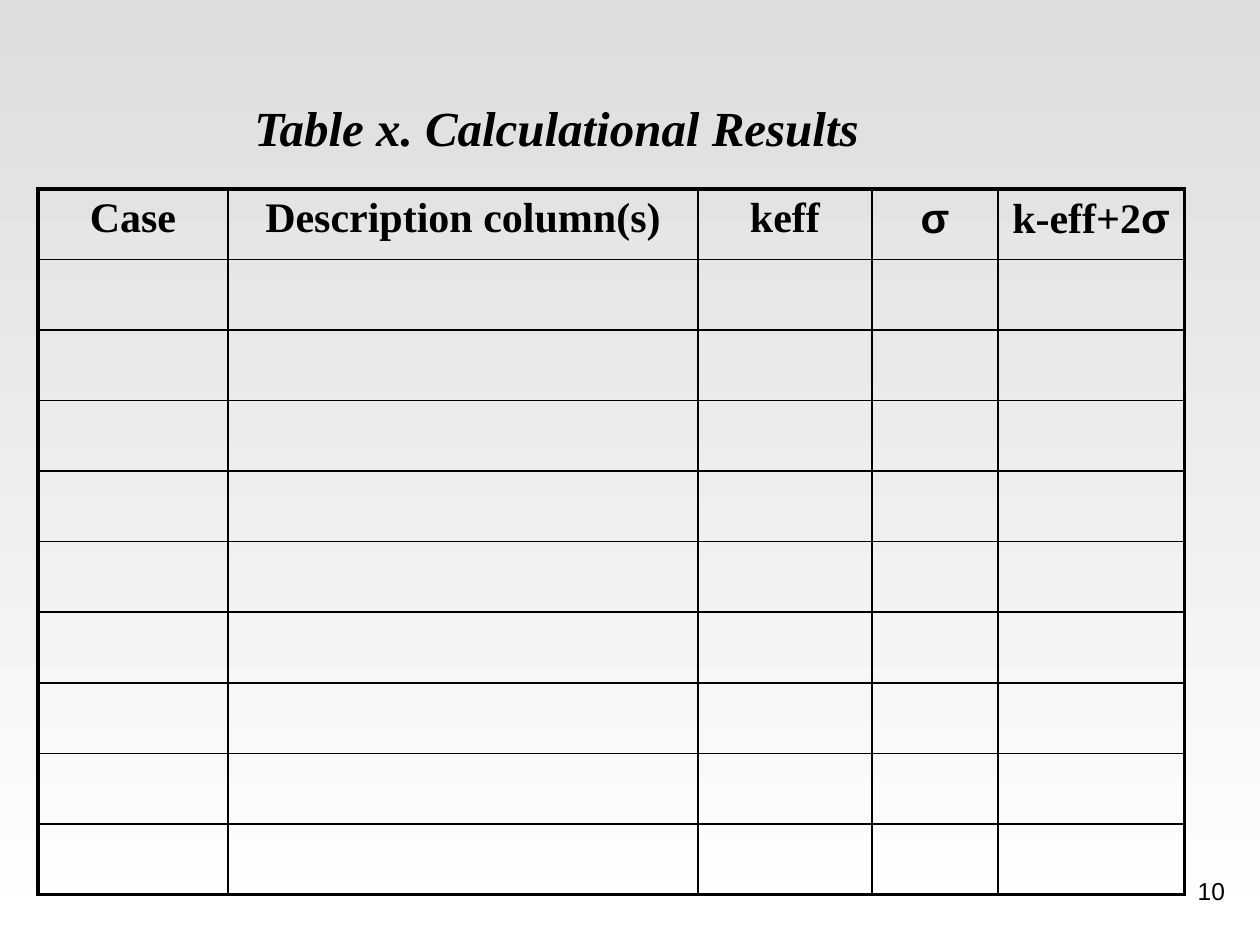
from dataclasses import dataclass
from lxml.etree import SubElement
from pptx import Presentation
from pptx.dml.color import RGBColor
from pptx.enum.text import MSO_ANCHOR, PP_ALIGN
from pptx.oxml.ns import qn
from pptx.util import Inches, Pt

COLORS = {"ink": "000000", "top": "DDDDDD", "base": "FFFFFF"}
SERIF, SANS = "Times New Roman", "Arial"
HEAD = {"size": Pt(24), "bold": True}
ROWS, ROW_H = 10, 0.56
THIN, THICK = 1, 2.25


@dataclass
class Span:
    text: str
    font: str = SERIF


@dataclass
class Column:
    width: float
    spans: list[Span]


@dataclass
class Label:
    box: tuple[float, float, float, float]
    span: Span
    align: PP_ALIGN
    style: dict


COLUMNS = [
    Column(1.51, [Span("Case")]),
    Column(3.73, [Span("Description column(s)")]),
    Column(1.38, [Span("keff")]),
    Column(1, [Span("σ", SANS)]),
    Column(1.48, [Span("k-eff+2"), Span("σ", SANS)]),
]
LABELS = [
    Label((1.92, 0.38, 7.83, 1.25), Span("Table x. Calculational Results"),
          PP_ALIGN.LEFT, {"size": Pt(28), "bold": True, "italic": True}),
    Label((7.74, 6.82, 2.08, 0.5), Span("10", SANS),
          PP_ALIGN.RIGHT, {"size": Pt(14)}),
]


def color(name: str) -> RGBColor:
    return RGBColor.from_string(COLORS[name])


def write(para, spans: list[Span], align: PP_ALIGN, style: dict) -> None:
    para.alignment = align
    for span in spans:
        run = para.add_run()
        run.text = span.text
        for key, value in {"name": span.font, **style}.items():
            setattr(run.font, key, value)
        run.font.color.rgb = color("ink")


def add_label(slide, label: Label) -> None:
    frame = slide.shapes.add_textbox(*map(Inches, label.box)).text_frame
    frame.word_wrap = True
    frame.vertical_anchor = MSO_ANCHOR.MIDDLE
    write(frame.paragraphs[0], [label.span], label.align, label.style)


def add_edge(cell, side: str, width: float) -> None:
    props = cell._tc.get_or_add_tcPr()
    line = SubElement(props, qn(f"a:ln{side}"), w=str(Pt(width)))
    fill = SubElement(line, qn("a:solidFill"))
    SubElement(fill, qn("a:srgbClr"), val=COLORS["ink"])


def add_grid(slide) -> None:
    width = sum(col.width for col in COLUMNS)
    box = map(Inches, (0.3, 1.5, width, ROWS * ROW_H))
    table = slide.shapes.add_table(ROWS, len(COLUMNS), *box).table
    table.first_row = table.horz_banding = False
    for row in table.rows:
        row.height = Inches(ROW_H)
    for c, col in enumerate(COLUMNS):
        table.columns[c].width = Inches(col.width)
        for r in range(ROWS):
            cell = table.cell(r, c)
            outer = {"L": c == 0, "R": c == len(COLUMNS) - 1,
                     "T": r == 0, "B": r == ROWS - 1}
            for side, edge in outer.items():
                add_edge(cell, side, THICK if edge else THIN)
            cell.fill.background()
        head = table.cell(0, c).text_frame.paragraphs[0]
        write(head, col.spans, PP_ALIGN.CENTER, HEAD)


def main() -> None:
    deck = Presentation()
    deck.slide_width, deck.slide_height = Inches(10), Inches(7.5)
    slide = deck.slides.add_slide(deck.slide_layouts[6])
    fill = slide.background.fill
    fill.gradient()
    fill.gradient_angle = 270
    for stop, name in zip(fill.gradient_stops, ("top", "base")):
        stop.color.rgb = color(name)
    add_grid(slide)
    for label in LABELS:
        add_label(slide, label)
    deck.save("out.pptx")


if __name__ == "__main__":
    main()
